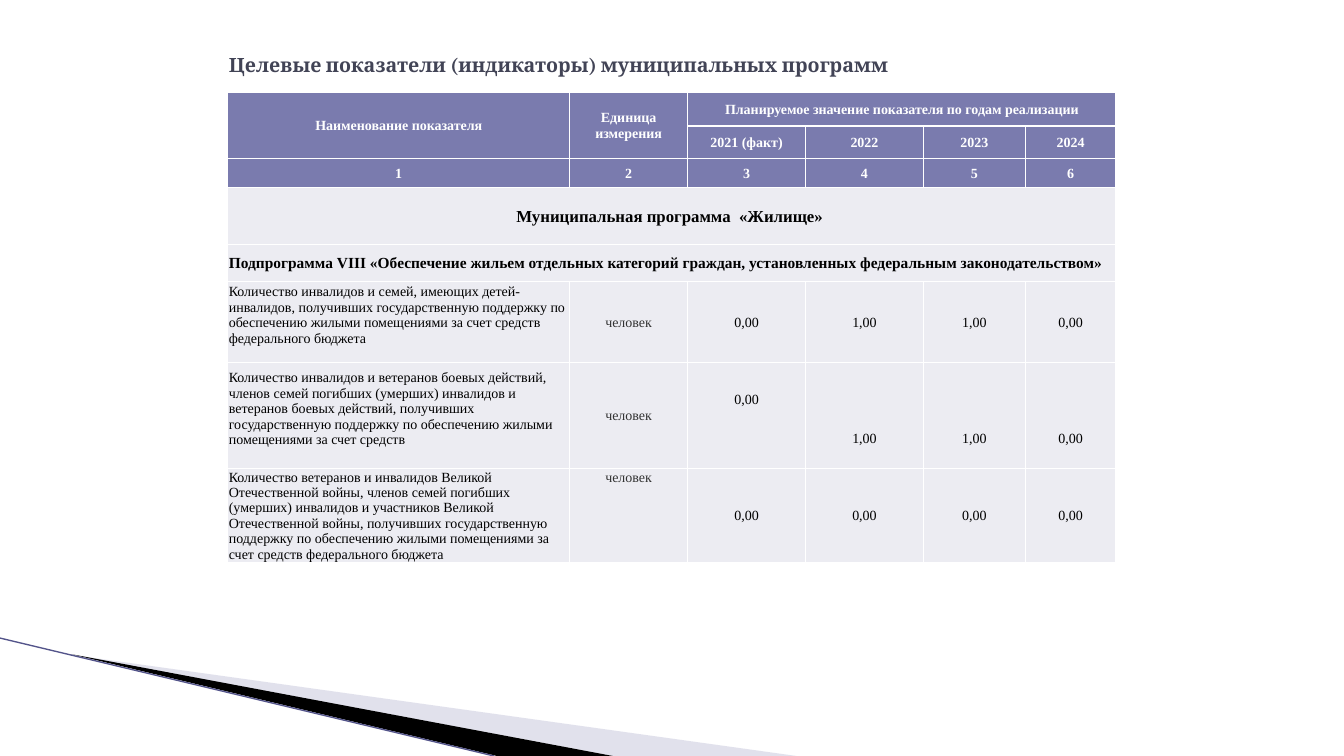
from lxml import etree
from pptx import Presentation
from pptx.dml.color import RGBColor
from pptx.enum.shapes import MSO_CONNECTOR
from pptx.enum.text import MSO_ANCHOR, PP_ALIGN
from pptx.oxml.ns import qn
from pptx.util import Inches, Pt

LEFT, CENTER = PP_ALIGN.LEFT, PP_ALIGN.CENTER
TOP, MIDDLE = MSO_ANCHOR.TOP, MSO_ANCHOR.MIDDLE
STRAIGHT = MSO_CONNECTOR.STRAIGHT

WHITE = RGBColor(0xFF, 0xFF, 0xFF)
BLACK = RGBColor(0, 0, 0)
GREY = RGBColor(0x33, 0x33, 0x33)
SLATE = RGBColor(0x42, 0x44, 0x56)
HEADER = RGBColor(0x7A, 0x7B, 0xAE)
BODY = RGBColor(0xEC, 0xEC, 0xF2)
LILAC = RGBColor(0xB6, 0xB6, 0xD1)
EDGE = RGBColor(0x53, 0x54, 0x8A)

W, H = 13.33, 7.5
COLS = [3.39, 1.17, 1.17, 1.17, 1.01, 0.9]
ROWS = [0.33, 0.32, 0.29, 0.57, 0.36, 0.81, 1.05, 0.92]
HEADER_ROWS = 3
SPANS = [(0, 0, 1, 0), (0, 1, 1, 1), (0, 2, 0, 5), (3, 0, 3, 5), (4, 0, 4, 5)]

HEADINGS = [
    ["Наименование показателя", "Единица измерения",
     "Планируемое значение показателя по годам реализации"],
    ["", "", "2021 (факт)", "2022", "2023", "2024"],
    ["1", "2", "3", "4", "5", "6"],
]
PROGRAM = "Муниципальная программа  «Жилище» "
SUBPROGRAM = ("Подпрограмма VIII «Обеспечение жильем отдельных категорий граждан, "
              "установленных федеральным законодательством»")
INDICATORS = [
    ("Количество инвалидов и семей, имеющих детей-инвалидов, получивших "
     "государственную поддержку по обеспечению жилыми помещениями за счет "
     "средств федерального бюджета", "человек", "0,00", "1,00", "1,00", "0,00"),
    ("Количество инвалидов и ветеранов боевых действий, членов семей погибших "
     "(умерших) инвалидов и ветеранов боевых действий, получивших "
     "государственную поддержку по обеспечению жилыми помещениями за счет "
     "средств", "человек", "0,00", "1,00", "1,00", "0,00"),
    ("Количество ветеранов и инвалидов Великой Отечественной войны, членов "
     "семей погибших (умерших) инвалидов и участников Великой Отечественной "
     "войны, получивших государственную поддержку по обеспечению жилыми "
     "помещениями за счет средств федерального бюджета",
     "человек", "0,00", "0,00", "0,00", "0,00"),
]
TOP_INSETS = {(6, 3): 0.46, (6, 4): 0.46, (6, 5): 0.46}
BOTTOM_INSETS = {(5, 0): 0.14, (6, 0): 0.14, (6, 2): 0.32}


def write(tf, text, size=10, color=BLACK, bold=False, align=CENTER,
          font="Times New Roman"):
    """Put one formatted paragraph into a text frame."""
    p = tf.paragraphs[0]
    p.alignment = align
    r = p.add_run()
    r.text = text
    r.font.name, r.font.size, r.font.bold = font, Pt(size), bold
    r.font.color.rgb = color


def add_wedge(s, points, color, opacity=100):
    """Draw a filled polygon without an outline."""
    builder = s.shapes.build_freeform(Inches(points[0][0]), Inches(points[0][1]))
    builder.add_line_segments([(Inches(x), Inches(y)) for x, y in points[1:]])
    sp = builder.convert_to_shape()
    sp.shadow.inherit = False
    sp.fill.solid()
    sp.fill.fore_color.rgb = color
    sp.line.fill.background()
    if opacity < 100:
        clr = sp.fill._xPr.find(".//" + qn("a:srgbClr"))
        etree.SubElement(clr, qn("a:alpha"), val=str(opacity * 1000))


def add_edge(s, start, end):
    """Draw the thin slanted line."""
    line = s.shapes.add_connector(STRAIGHT, *map(Inches, start + end))
    line.line.color.rgb = EDGE
    line.line.width = Pt(0.95)
    etree.SubElement(line._element.spPr, qn("a:effectLst"))


def add_title(s, text):
    """Place and fill the title placeholder."""
    sp = s.shapes.title
    sp.left, sp.top = Inches(2.17), Inches(0.3)
    sp.width, sp.height = Inches(9), Inches(0.69)
    sp.text_frame.word_wrap = True
    sp.text_frame.vertical_anchor = MIDDLE
    write(sp.text_frame, text, size=14, color=SLATE, bold=True, align=LEFT,
          font="Cambria")


def style_cell(cell, color, anchor=MIDDLE, top=0.01, bottom=0):
    """Set fill, insets, anchor and white borders of a cell."""
    cell.fill.solid()
    cell.fill.fore_color.rgb = color
    cell.vertical_anchor = anchor
    cell.margin_left = cell.margin_right = Inches(0.01)
    cell.margin_top, cell.margin_bottom = Inches(top), Inches(bottom)
    tcPr = cell._tc.get_or_add_tcPr()
    for i, side in enumerate(("lnL", "lnR", "lnT", "lnB")):
        ln = etree.Element(qn("a:" + side), w=str(Pt(1)))
        fill = etree.SubElement(ln, qn("a:solidFill"))
        etree.SubElement(fill, qn("a:srgbClr"), val=str(WHITE))
        tcPr.insert(i, ln)


def add_indicator_table(s):
    """Build the table of indicators by year."""
    frame = s.shapes.add_table(len(ROWS), len(COLS), Inches(2.26), Inches(0.92),
                               Inches(sum(COLS)), Inches(sum(ROWS)))
    table = frame.table
    for col, width in zip(table.columns, COLS):
        col.width = Inches(width)
    for row, height in zip(table.rows, ROWS):
        row.height = Inches(height)
    for r in range(len(ROWS)):
        for c in range(len(COLS)):
            style_cell(table.cell(r, c), HEADER if r < HEADER_ROWS else BODY,
                       anchor=TOP if (r, c) == (7, 1) else MIDDLE,
                       top=TOP_INSETS.get((r, c), 0.01),
                       bottom=BOTTOM_INSETS.get((r, c), 0))
    for r1, c1, r2, c2 in SPANS:
        table.cell(r1, c1).merge(table.cell(r2, c2))

    for r, texts in enumerate(HEADINGS):
        for c, text in enumerate(texts):
            if text:
                write(table.cell(r, c).text_frame, text, color=WHITE, bold=True)
    write(table.cell(3, 0).text_frame, PROGRAM, size=12, bold=True)
    write(table.cell(4, 0).text_frame, SUBPROGRAM, size=11, bold=True, align=LEFT)
    for r, texts in enumerate(INDICATORS, start=5):
        for c, text in enumerate(texts):
            write(table.cell(r, c).text_frame, text,
                  color=GREY if c == 1 else BLACK, align=CENTER if c else LEFT)


def main():
    """Build and save the slide."""
    prs = Presentation()
    prs.slide_width, prs.slide_height = Inches(W), Inches(H)
    s = prs.slides.add_slide(prs.slide_layouts[5])
    add_wedge(s, [(0.73, 6.5), (7.9, H), (6.08, H)], LILAC, opacity=40)
    add_wedge(s, [(0.71, 6.49), (6.08, H), (4.93, H)], BLACK)
    add_edge(s, (0, 6.33), (4.9, H))
    add_title(s, "Целевые показатели (индикаторы) муниципальных программ")
    add_indicator_table(s)
    prs.save("out.pptx")


if __name__ == "__main__":
    main()
